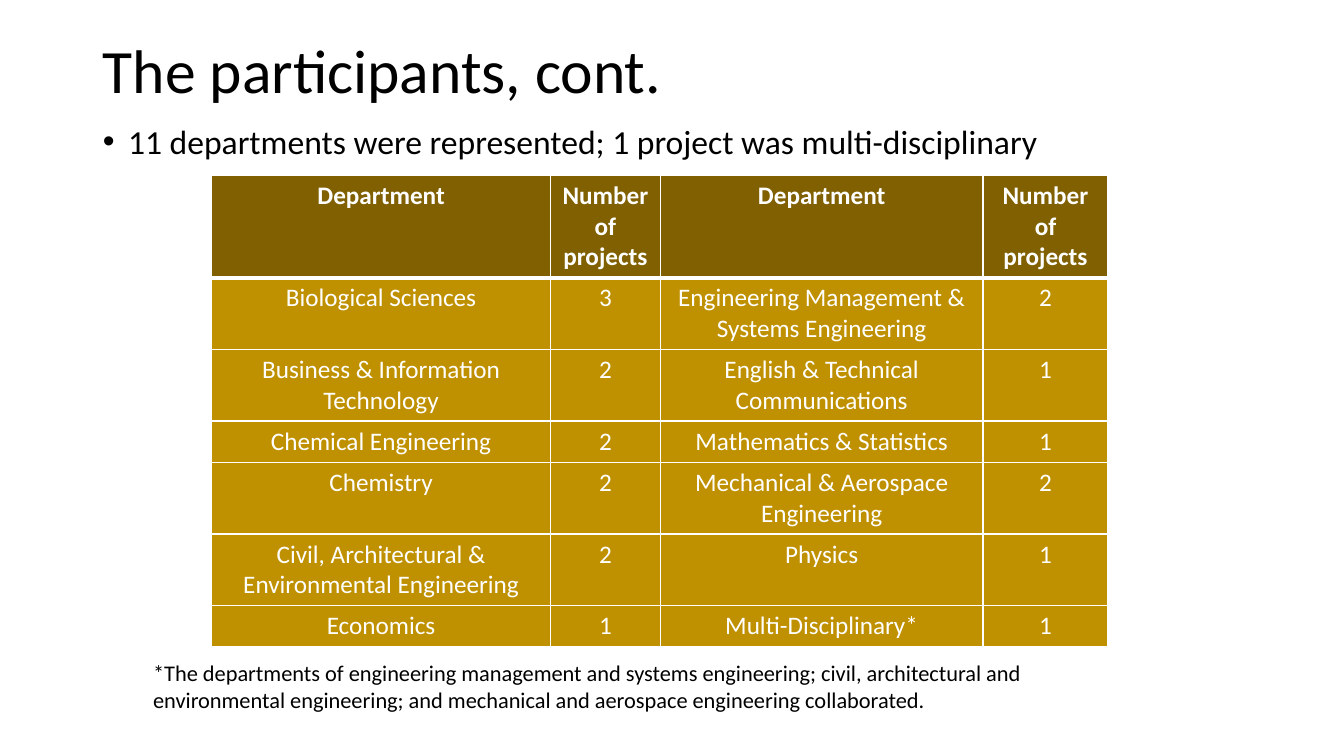
from lxml import etree
from pptx import Presentation
from pptx.dml.color import RGBColor
from pptx.enum.text import MSO_ANCHOR, MSO_AUTO_SIZE, PP_ALIGN
from pptx.oxml.ns import qn
from pptx.util import Emu, Pt

SCALE = 9144  # EMU in one px, at 100 px to the inch
FONT = "Calibri"
BLACK = RGBColor(0x00, 0x00, 0x00)
WHITE = RGBColor(0xFF, 0xFF, 0xFF)
BROWN = RGBColor(0x80, 0x60, 0x00)
GOLD = RGBColor(0xBF, 0x90, 0x00)
LEFT, CENTER = PP_ALIGN.LEFT, PP_ALIGN.CENTER
TOP, MIDDLE = MSO_ANCHOR.TOP, MSO_ANCHOR.MIDDLE
FIXED = MSO_AUTO_SIZE.NONE
GROW = MSO_AUTO_SIZE.SHAPE_TO_FIT_TEXT

COLS = [336, 109, 320, 124]
ROWS = [100, 71, 71, 41, 71, 71, 41]
HEAD = ("Department", "Number of projects") * 2
COUNTS = [
    HEAD,
    ("Biological Sciences", "3", "Engineering Management & Systems Engineering", "2"),
    ("Business & Information Technology", "2", "English & Technical Communications", "1"),
    ("Chemical Engineering", "2", "Mathematics & Statistics", "1"),
    ("Chemistry", "2", "Mechanical & Aerospace Engineering", "2"),
    ("Civil, Architectural & Environmental Engineering", "2", "Physics", "1"),
    ("Economics", "1", "Multi-Disciplinary*", "1"),
]
NOTE = ("*The departments of engineering management and systems engineering; "
        "civil, architectural and environmental engineering; and mechanical "
        "and aerospace engineering collaborated.")


def px(count):
    return Emu(count * SCALE)


class Deck:
    def __init__(self, width, height):
        self.prs = Presentation()
        self.prs.slide_width, self.prs.slide_height = px(width), px(height)
        self.slide = self.prs.slides.add_slide(self.prs.slide_layouts[1])

    def text(self, frame, words, size, color=BLACK, bold=False, align=LEFT):
        """Put one run in the first paragraph and return that paragraph."""
        para = frame.paragraphs[0]
        para.alignment = align
        run = para.add_run()
        run.text = words
        font = run.font
        font.name, font.size, font.bold = FONT, Pt(size), bold
        font.color.rgb = color
        return para

    def place(self, shape, box, anchor, fit):
        """Move a text shape and return its text frame."""
        shape.left, shape.top, shape.width, shape.height = map(px, box)
        frame = shape.text_frame
        frame.word_wrap = True
        frame.vertical_anchor, frame.auto_size = anchor, fit
        return frame

    def title(self, box, words):
        frame = self.place(self.slide.shapes.title, box, MIDDLE, FIXED)
        self.text(frame, words, 44).line_spacing = 0.9

    def bullet(self, box, words):
        frame = self.place(self.slide.placeholders[1], box, TOP, FIXED)
        para = self.text(frame, words, 24)
        para.line_spacing, para.space_before = 0.9, Pt(10)
        props = para._p.get_or_add_pPr()
        props.set("marL", str(px(25)))
        props.set("indent", str(px(-25)))
        etree.SubElement(props, qn("a:buFont"), typeface="Arial")
        etree.SubElement(props, qn("a:buChar"), char="•")

    def note(self, box, words):
        shape = self.slide.shapes.add_textbox(*map(px, box))
        self.text(self.place(shape, box, TOP, GROW), words, 16)

    def edge(self, cell, top, bottom):
        """Draw white cell borders; top and bottom are widths in points."""
        props = cell._tc.get_or_add_tcPr()
        sides = {"L": 1, "R": 1, "T": top, "B": bottom}
        for place, (side, width) in enumerate(sides.items()):
            line = etree.Element(qn(f"a:ln{side}"), w=str(Pt(width)))
            fill = etree.SubElement(line, qn("a:solidFill"))
            etree.SubElement(fill, qn("a:srgbClr"), val=str(WHITE))
            props.insert(place, line)

    def table(self, left, top, cols, rows, data):
        box = map(px, (left, top, sum(cols), sum(rows)))
        table = self.slide.shapes.add_table(len(rows), len(cols), *box).table
        table.horz_banding = False
        for col, width in zip(table.columns, cols):
            col.width = px(width)
        for r, (row, height, texts) in enumerate(zip(table.rows, rows, data)):
            row.height = px(height)
            head = r == 0
            for cell, words in zip(row.cells, texts):
                cell.fill.solid()
                cell.fill.fore_color.rgb = BROWN if head else GOLD
                self.text(cell.text_frame, words, 18, WHITE, head, CENTER)
                self.edge(cell, 3 if r == 1 else 1, 3 if head else 1)

    def save(self):
        self.prs.save("out.pptx")


def main():
    deck = Deck(1333, 750)
    deck.title((92, 0, 1150, 145), "The participants, cont.")
    deck.bullet((92, 119, 1150, 476),
                "11 departments were represented; 1 project was multi-disciplinary")
    deck.table(210, 174, COLS, ROWS, COUNTS)
    deck.note((142, 649, 889, 64), NOTE)
    deck.save()


if __name__ == "__main__":
    main()
